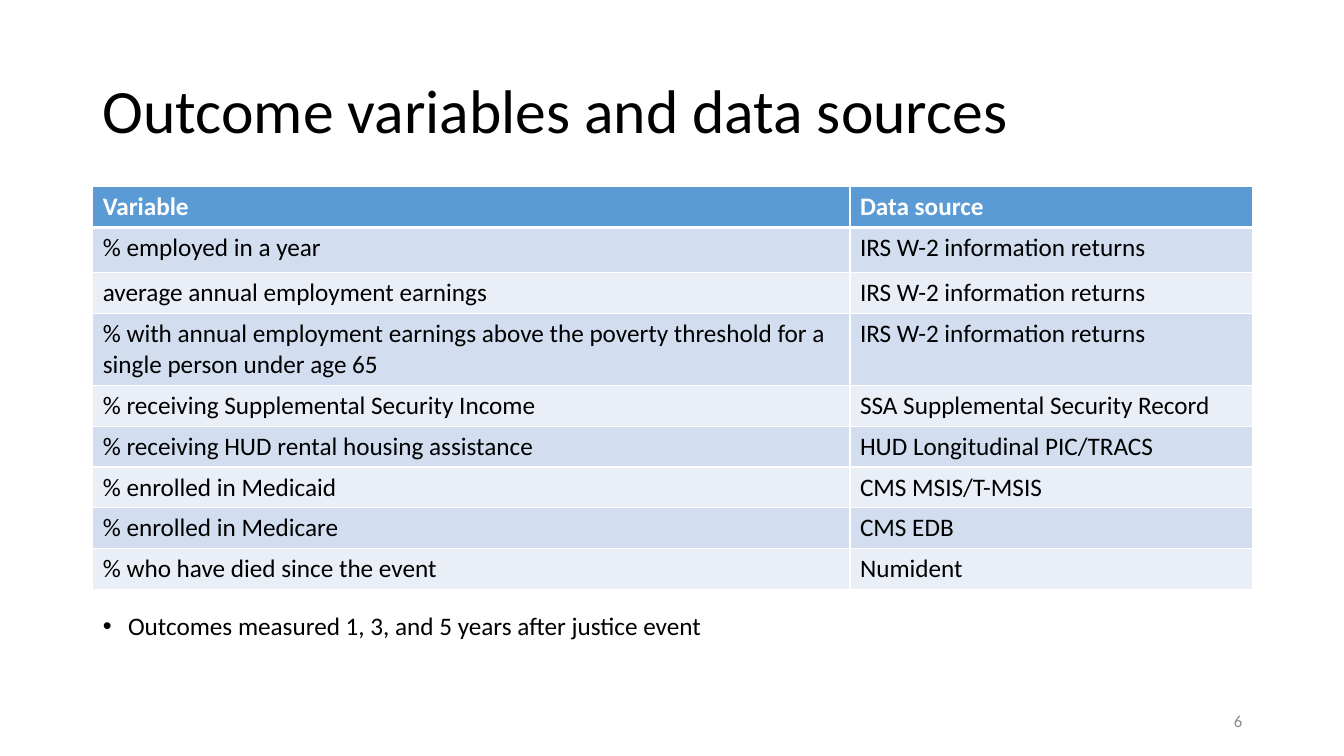
from lxml.etree import SubElement
from pptx import Presentation
from pptx.dml.color import RGBColor
from pptx.enum.text import MSO_ANCHOR, MSO_AUTO_SIZE, PP_ALIGN
from pptx.oxml.ns import qn
from pptx.util import Inches, Pt

FONT = "Calibri"
BLACK, WHITE, GREY = "000000", "FFFFFF", "8C8C8C"
HEADER_BLUE, BAND_DARK, BAND_LIGHT = "5B9BD5", "D2DEEF", "EAEFF7"
LEFT, WIDTH = 0.92, 11.5

COLUMN_WIDTHS = [7.51, 3.99]
ROW_HEIGHT = 0.39
TALL_ROWS = {1: 0.45, 3: 0.69}
OUTCOMES = [
    ("Variable", "Data source"),
    ("% employed in a year", "IRS W-2 information returns"),
    ("average annual employment earnings", "IRS W-2 information returns"),
    ("% with annual employment earnings above the poverty threshold "
     "for a single person under age 65", "IRS W-2 information returns"),
    ("% receiving Supplemental Security Income",
     "SSA Supplemental Security Record"),
    ("% receiving HUD rental housing assistance", "HUD Longitudinal PIC/TRACS"),
    ("% enrolled in Medicaid", "CMS MSIS/T-MSIS"),
    ("% enrolled in Medicare", "CMS EDB"),
    ("% who have died since the event", "Numident"),
]


def color(hex_code):
    return RGBColor.from_string(hex_code)


def add_run(paragraph, text, size, hex_code, bold=False):
    run = paragraph.add_run()
    run.text = text
    run.font.name = FONT
    run.font.size = Pt(size)
    run.font.bold = bold
    run.font.color.rgb = color(hex_code)


def place(shape, left, top, width, height):
    shape.left, shape.top = Inches(left), Inches(top)
    shape.width, shape.height = Inches(width), Inches(height)


def prepare_text(shape, anchor, align=PP_ALIGN.LEFT):
    frame = shape.text_frame
    frame.word_wrap = True
    frame.auto_size = MSO_AUTO_SIZE.NONE
    frame.vertical_anchor = anchor
    paragraph = frame.paragraphs[0]
    paragraph.alignment = align
    return paragraph


def add_title(slide, text):
    title = slide.shapes.title
    place(title, LEFT, 0.4, WIDTH, 1.45)
    heading = prepare_text(title, MSO_ANCHOR.MIDDLE)
    heading.line_spacing = 0.9
    add_run(heading, text, 44, BLACK)


def add_bullet_note(slide, text):
    note = slide.placeholders[1]
    place(note, LEFT, 6.04, WIDTH, 0.59)
    bullet = prepare_text(note, MSO_ANCHOR.TOP)
    properties = bullet._p.get_or_add_pPr()
    properties.set("marL", str(Inches(0.25)))
    properties.set("indent", str(Inches(-0.25)))
    SubElement(properties, qn("a:buFont"), typeface="Arial")
    SubElement(properties, qn("a:buChar"), char="•")
    bullet.line_spacing = 0.9
    bullet.space_before = Pt(0)
    add_run(bullet, text, 18, BLACK)


def add_slide_number(slide, text):
    number = slide.shapes.add_textbox(
        Inches(9.42), Inches(6.95), Inches(3), Inches(0.4))
    paragraph = prepare_text(number, MSO_ANCHOR.MIDDLE, PP_ALIGN.RIGHT)
    add_run(paragraph, text, 12, GREY)


def set_borders(cell, top, bottom):
    properties = cell._tc.get_or_add_tcPr()
    for side, points in (("L", 1), ("R", 1), ("T", top), ("B", bottom)):
        line = SubElement(properties, qn(f"a:ln{side}"), w=str(Pt(points)))
        fill = SubElement(line, qn("a:solidFill"))
        SubElement(fill, qn("a:srgbClr"), val=WHITE)


def add_outcome_table(slide):
    heights = [TALL_ROWS.get(i, ROW_HEIGHT) for i in range(len(OUTCOMES))]
    table = slide.shapes.add_table(
        len(OUTCOMES), len(COLUMN_WIDTHS), Inches(LEFT), Inches(1.85),
        Inches(WIDTH), Inches(sum(heights))).table
    for column, width in zip(table.columns, COLUMN_WIDTHS):
        column.width = Inches(width)

    for i, (outcome, height) in enumerate(zip(OUTCOMES, heights)):
        table.rows[i].height = Inches(height)
        is_header = i == 0
        band = HEADER_BLUE if is_header else (BAND_LIGHT, BAND_DARK)[i % 2]
        for j, text in enumerate(outcome):
            cell = table.cell(i, j)
            # Thick rule between the header and the first row
            set_borders(cell, 3 if i == 1 else 1, 3 if is_header else 1)
            cell.fill.solid()
            cell.fill.fore_color.rgb = color(band)
            add_run(cell.text_frame.paragraphs[0], text, 18,
                    WHITE if is_header else BLACK, is_header)


def main():
    presentation = Presentation()
    presentation.slide_width = Inches(13.33)
    presentation.slide_height = Inches(7.5)
    slide = presentation.slides.add_slide(presentation.slide_layouts[1])

    # Heading and page number
    add_title(slide, "Outcome variables and data sources")
    add_slide_number(slide, "6")

    # Outcomes with their sources, and the timing note below
    add_outcome_table(slide)
    add_bullet_note(
        slide, "Outcomes measured 1, 3, and 5 years after justice event")

    presentation.save("out.pptx")


if __name__ == "__main__":
    main()
